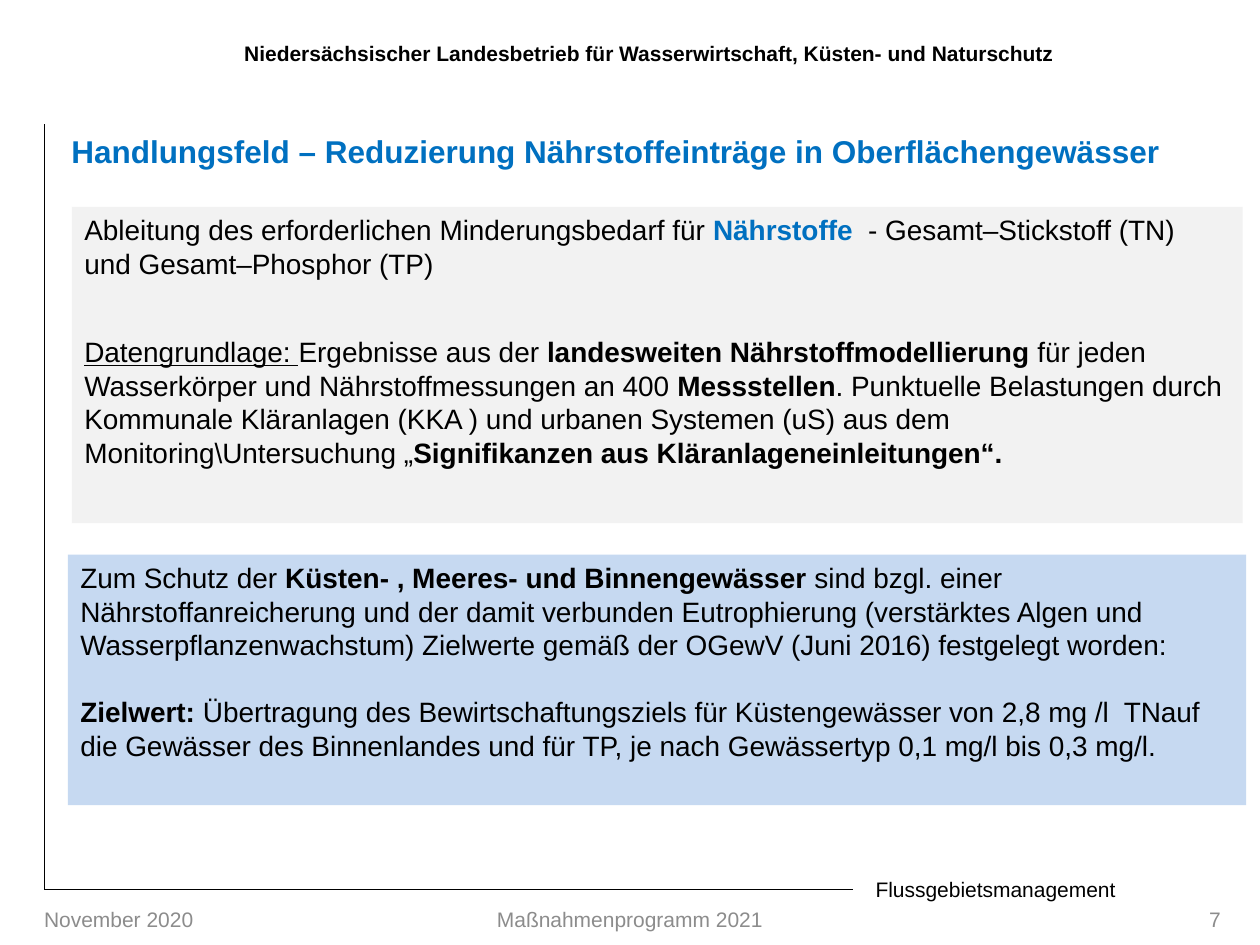
"""Build the slide on reducing nutrient inputs into surface waters."""
from dataclasses import dataclass

import pptx
import pptx.dml.color
import pptx.enum.shapes
import pptx.enum.text
import pptx.oxml
import pptx.oxml.ns
import pptx.util

Cm = pptx.util.Cm
Pt = pptx.util.Pt
ALIGN = pptx.enum.text.PP_ALIGN
ANCHOR = pptx.enum.text.MSO_ANCHOR

BLACK = "000000"
BLUE = "0070C0"
GREY = "8C8C8C"


@dataclass(frozen=True)
class Box:
    """Position and size in centimetres."""
    left: float
    top: float
    width: float
    height: float

    def lengths(self) -> list:
        """Return the four values as lengths."""
        return [Cm(v) for v in (self.left, self.top, self.width, self.height)]


@dataclass(frozen=True)
class Span:
    """A stretch of text in one format."""
    text: str
    bold: bool = False
    underline: bool = False
    color: str = BLACK


@dataclass(frozen=True)
class Panel:
    """A filled rectangle with paragraphs set apart by a gap in points."""
    box: Box
    fill: str
    gap: float
    paragraphs: tuple


@dataclass(frozen=True)
class Label:
    """A single line of text with its place and format."""
    text: str
    box: Box
    style: dict


def rgb(value: str) -> pptx.dml.color.RGBColor:
    """Turn a hex string into a colour."""
    return pptx.dml.color.RGBColor.from_string(value)


def add_text(paragraph, text: str, *, size: float = 12, color: str = BLACK,
             bold: bool = False, underline: bool = False) -> None:
    """Append formatted text, breaking lines at newlines."""
    for index, line in enumerate(text.split("\n")):
        if index:
            paragraph.add_line_break()
        run = paragraph.add_run()
        run.text = line
        run.font.name = "Arial"
        run.font.size = Pt(size)
        run.font.bold = bold
        run.font.underline = underline
        run.font.color.rgb = rgb(color)


def draw_label(slide, label: Label, *, align=ALIGN.LEFT, anchor=ANCHOR.TOP,
               inset: float = 0.25, **style) -> None:
    """Draw a one-line text box."""
    frame = slide.shapes.add_textbox(*label.box.lengths()).text_frame
    frame.word_wrap = True
    frame.vertical_anchor = anchor
    frame.margin_left = frame.margin_right = Cm(inset)
    frame.paragraphs[0].alignment = align
    add_text(frame.paragraphs[0], label.text, **style)


def draw_panel(slide, panel: Panel) -> None:
    """Draw a filled rectangle with its paragraphs."""
    shape = slide.shapes.add_shape(
        pptx.enum.shapes.MSO_SHAPE.RECTANGLE, *panel.box.lengths())
    shape.shadow.inherit = False
    shape.fill.solid()
    shape.fill.fore_color.rgb = rgb(panel.fill)
    shape.line.fill.background()
    frame = shape.text_frame
    frame.word_wrap = True
    frame.vertical_anchor = ANCHOR.TOP
    for index, spans in enumerate(panel.paragraphs):
        paragraph = frame.add_paragraph() if index else frame.paragraphs[0]
        paragraph.alignment = ALIGN.LEFT
        if index:
            paragraph.space_before = Pt(panel.gap)
        for span in spans:
            add_text(paragraph, span.text, size=16, color=span.color,
                     bold=span.bold, underline=span.underline)


def draw_line(slide, start: tuple, end: tuple) -> None:
    """Draw a thin black line between two points in centimetres."""
    line = slide.shapes.add_connector(
        pptx.enum.shapes.MSO_CONNECTOR.STRAIGHT,
        *(Cm(v) for v in start + end))
    line.line.color.rgb = rgb(BLACK)
    line.line.width = Pt(0.75)
    line._element.spPr.append(pptx.oxml.parse_xml(
        f"<a:effectLst {pptx.oxml.ns.nsdecls('a')}/>"))


FOOTER = dict(color=GREY, anchor=ANCHOR.MIDDLE, inset=0)
LABELS = (
    Label("Flussgebietsmanagement", Box(17.4, 17.55, 5.61, 0.76), {}),
    Label("Niedersächsischer Landesbetrieb für Wasserwirtschaft, "
          "Küsten- und Naturschutz", Box(4.09, 0.53, 18, 1.09),
          dict(bold=True, align=ALIGN.CENTER, anchor=ANCHOR.MIDDLE)),
    Label("Handlungsfeld – Reduzierung Nährstoffeinträge in "
          "Oberflächengewässer", Box(1.19, 2.54, 24.1, 1),
          dict(size=18, color=BLUE, bold=True)),
    Label("November 2020", Box(0.89, 18.14, 5.11, 0.76), FOOTER),
    Label("Maßnahmenprogramm 2021", Box(9.22, 18.14, 6.96, 0.76),
          FOOTER | dict(align=ALIGN.CENTER)),
    Label("7", Box(23.77, 18.14, 0.84, 0.76), FOOTER | dict(align=ALIGN.RIGHT)),
)

PANELS = (
    Panel(Box(1.45, 4.17, 23.6, 6.38), "F2F2F2", 31, (
        (Span("Ableitung des erforderlichen Minderungsbedarf für "),
         Span("Nährstoffe", bold=True, color=BLUE),
         Span("  - Gesamt–Stickstoff (TN)\nund Gesamt–Phosphor (TP)")),
        (Span("Datengrundlage: ", underline=True),
         Span("Ergebnisse aus der "),
         Span("landesweiten Nährstoffmodellierung ", bold=True),
         Span("für jeden Wasserkörper und Nährstoffmessungen an 400 "),
         Span("Messstellen", bold=True),
         Span(". Punktuelle Belastungen durch Kommunale Kläranlagen (KKA ) "
              "und urbanen Systemen (uS) aus dem Monitoring\\Untersuchung „"),
         Span("Signifikanzen aus Kläranlageneinleitungen“.", bold=True)),
    )),
    Panel(Box(1.37, 11.18, 23.75, 5.05), "C6D9F1", 19, (
        (Span("Zum Schutz der "),
         Span("Küsten- , Meeres- und Binnengewässer ", bold=True),
         Span("sind bzgl. einer Nährstoffanreicherung und der damit verbunden "
              "Eutrophierung (verstärktes Algen und Wasserpflanzenwachstum) "
              "Zielwerte gemäß der OGewV (Juni 2016) festgelegt worden:")),
        (Span("Zielwert: ", bold=True),
         Span("Übertragung des Bewirtschaftungsziels für Küstengewässer von "
              "2,8 mg /l  TNauf die Gewässer des Binnenlandes und für TP, "
              "je nach Gewässertyp 0,1 mg/l bis 0,3 mg/l.")),
    )),
)


def main() -> None:
    """Build and save the presentation."""
    deck = pptx.Presentation()
    deck.slide_width, deck.slide_height = Cm(25.4), Cm(19.05)
    slide = deck.slides.add_slide(deck.slide_layouts[6])
    corner = (0.89, 17.93)
    for end in ((17.2, 17.93), (0.89, 2.51)):
        draw_line(slide, corner, end)
    for panel in PANELS:
        draw_panel(slide, panel)
    for label in LABELS:
        draw_label(slide, label, **label.style)
    deck.save("out.pptx")


if __name__ == "__main__":
    main()
